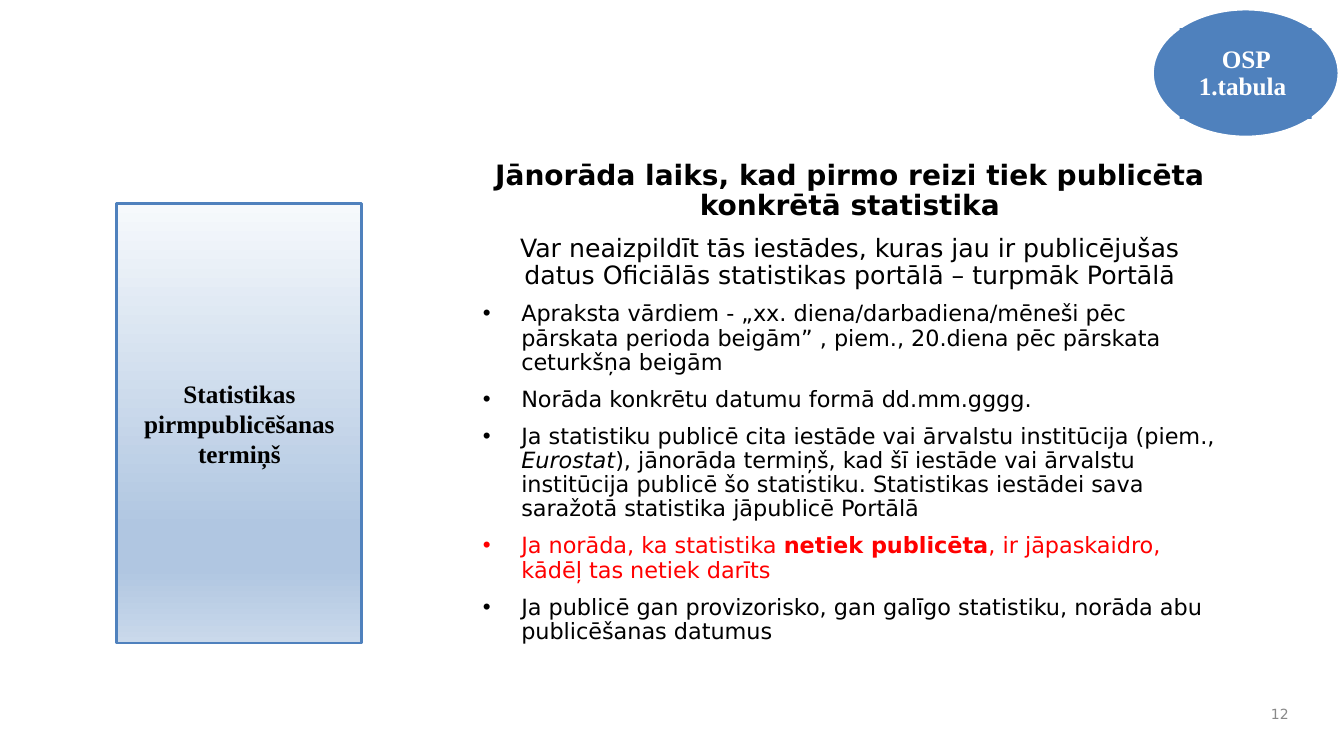
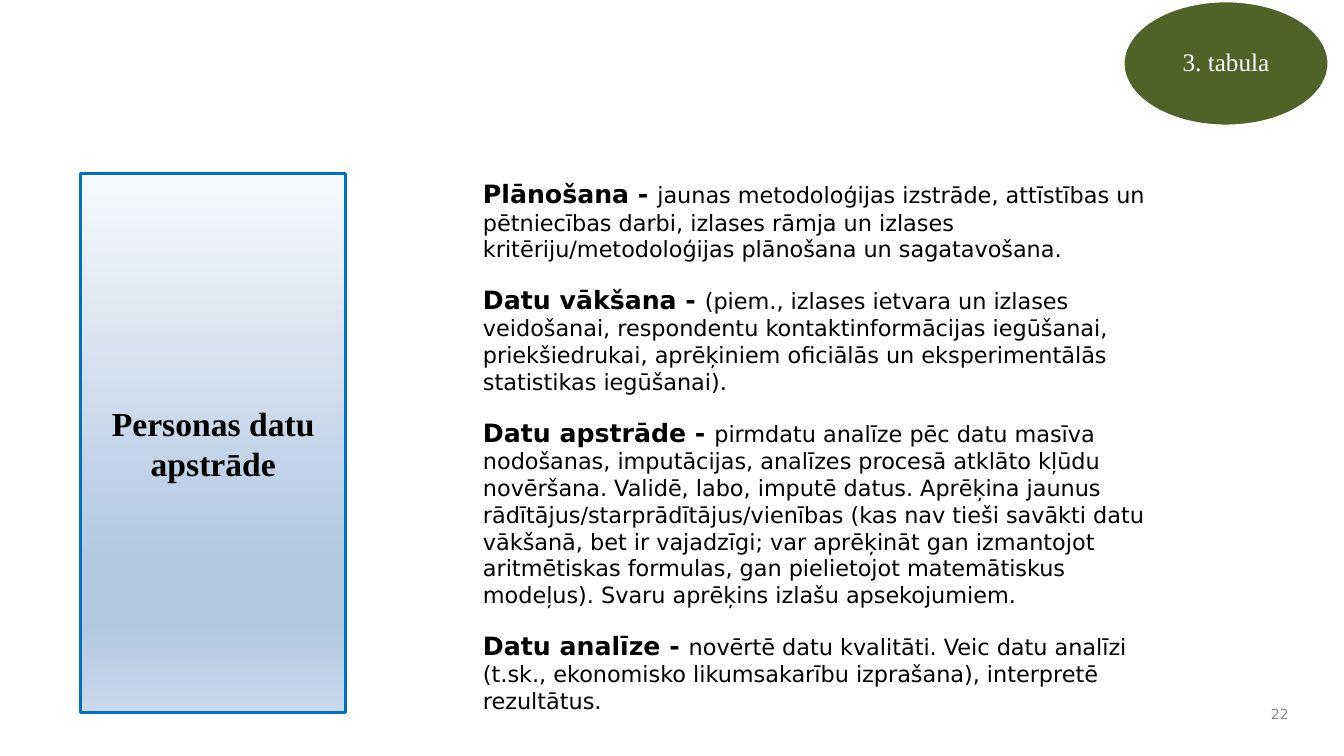
from lxml.etree import SubElement
from pptx import Presentation
from pptx.dml.color import RGBColor
from pptx.enum.shapes import MSO_SHAPE
from pptx.enum.text import MSO_ANCHOR as ANCHOR, MSO_AUTO_SIZE, PP_ALIGN as ALIGN
from pptx.oxml.ns import qn
from pptx.util import Inches, Pt

SANS, SERIF = "DejaVu Sans", "Times New Roman"
BLACK, WHITE, RED, GREY = "000000", "FFFFFF", "FF0000", "898989"
BLUE, BRIGHT_BLUE, GREEN = "4F81BD", "0070C0", "4F6228"
PANEL_STOPS = [(0, "F6F9FC"), (74, "B0C6E1"), (83, "B0C6E1"), (100, "CAD9EB")]
BULLET_INDENT = 0.38


def rgb(value):
    return RGBColor.from_string(value)


def inches(box):
    return [Inches(v) for v in box]


def set_attrs(obj, values):
    for name, value in values.items():
        setattr(obj, name, value)


def set_frame(tf, anchor=ANCHOR.MIDDLE, side=0.1, edge=0.05):
    set_attrs(tf, dict(word_wrap=True, auto_size=MSO_AUTO_SIZE.NONE,
                       vertical_anchor=anchor,
                       margin_left=Inches(side), margin_right=Inches(side),
                       margin_top=Inches(edge), margin_bottom=Inches(edge)))


def add_run(p, text, size, font=SANS, color=BLACK, bold=False, italic=False):
    r = p.add_run()
    r.text = text
    set_attrs(r.font, dict(size=Pt(size), name=font, bold=bold, italic=italic))
    r.font.color.rgb = rgb(color)


def set_bullet(p, bulleted):
    pPr = p._p.get_or_add_pPr()
    indent = Inches(BULLET_INDENT) if bulleted else 0
    pPr.set("marL", str(indent))
    pPr.set("indent", str(-indent))
    if bulleted:
        SubElement(pPr, qn("a:buChar")).set("char", "•")
    else:
        SubElement(pPr, qn("a:buNone"))


def add_body(slide, box, paragraphs, after, spacing=1.0):
    """Fill the body placeholder; a paragraph is (style, list of run formats)."""
    sp = slide.placeholders[1]
    sp.left, sp.top, sp.width, sp.height = inches(box)
    tf = sp.text_frame
    set_frame(tf, ANCHOR.TOP)
    for i, (style, runs) in enumerate(paragraphs):
        p = tf.paragraphs[0] if i == 0 else tf.add_paragraph()
        set_bullet(p, style == "bullet")
        before = 0.2 * runs[0]["size"] if i else 0
        set_attrs(p, dict(alignment=ALIGN.CENTER if style == "center" else ALIGN.LEFT,
                          line_spacing=spacing, space_before=Pt(before),
                          space_after=Pt(after)))
        for run in runs:
            add_run(p, **run)


def add_panel(slide, box, text, size, line_color, line_width):
    sp = slide.shapes.add_shape(MSO_SHAPE.RECTANGLE, *inches(box))
    sp.shadow.inherit = False
    sp.fill.gradient()
    sp.fill.gradient_angle = 270
    stops = sp._element.spPr.find(".//" + qn("a:gsLst"))
    stops.clear()
    for pos, color in PANEL_STOPS:
        gs = SubElement(stops, qn("a:gs"), pos=str(pos * 1000))
        SubElement(gs, qn("a:srgbClr"), val=color)
    sp.line.color.rgb = rgb(line_color)
    sp.line.width = Pt(line_width)
    set_frame(sp.text_frame)
    p = sp.text_frame.paragraphs[0]
    p.alignment = ALIGN.CENTER
    add_run(p, text, size, SERIF, bold=True)


def add_badge(slide, box, label_box, text, color, bold=False, label_fill=None):
    """Group an ellipse with its label, which is offset from the ellipse's corner."""
    left, top = box[:2]
    dx, dy, width, height = label_box
    group = slide.shapes.add_group_shape()
    oval = group.shapes.add_shape(MSO_SHAPE.OVAL, *inches(box))
    oval.shadow.inherit = False
    oval.fill.solid()
    oval.fill.fore_color.rgb = rgb(color)
    oval.line.color.rgb = rgb(WHITE)
    oval.line.width = Pt(2)
    label = group.shapes.add_textbox(*inches((left + dx, top + dy, width, height)))
    if label_fill:
        label.fill.solid()
        label.fill.fore_color.rgb = rgb(label_fill)
    set_frame(label.text_frame, side=0.01, edge=0.01)
    p = label.text_frame.paragraphs[0]
    set_attrs(p, dict(alignment=ALIGN.CENTER, line_spacing=0.9))
    add_run(p, text, 18, SERIF, WHITE, bold)


def add_page_number(slide, number):
    sp = slide.shapes.add_textbox(*inches((12.44, 6.92, 0.44, 0.33)))
    set_frame(sp.text_frame)
    p = sp.text_frame.paragraphs[0]
    p.alignment = ALIGN.RIGHT
    add_run(p, str(number), 10, color=GREY)


def new_slide(prs, number):
    slide = prs.slides.add_slide(prs.slide_layouts[1])
    title = slide.shapes.title._element
    title.getparent().remove(title)
    add_page_number(slide, number)
    return slide


def text_run(text, size=16, **fmt):
    return dict(text=text, size=size, **fmt)


def first_publication_slide(prs):
    slide = new_slide(prs, 12)
    add_body(slide, (4.69, 1.55, 7.48, 5.83), [
        ("center", [text_run("Jānorāda laiks, kad pirmo reizi tiek publicēta konkrētā "
                             "statistika", 20, bold=True)]),
        ("center", [text_run("Var neaizpildīt tās iestādes, kuras jau ir publicējušas datus "
                             "Oficiālās statistikas portālā – turpmāk Portālā", 18)]),
        ("bullet", [text_run("Apraksta vārdiem - „xx. diena/darbadiena/mēneši pēc pārskata "
                             "perioda beigām” , piem., 20.diena pēc pārskata ceturkšņa "
                             "beigām")]),
        ("bullet", [text_run("Norāda konkrētu datumu formā dd.mm.gggg.")]),
        ("bullet", [text_run("Ja statistiku publicē cita iestāde vai ārvalstu institūcija "
                             "(piem., "),
                    text_run("Eurostat", italic=True),
                    text_run("), jānorāda termiņš, kad šī iestāde vai ārvalstu institūcija "
                             "publicē šo statistiku. Statistikas iestādei sava saražotā "
                             "statistika jāpublicē Portālā")]),
        ("bullet", [text_run("Ja norāda, ka statistika ", color=RED),
                    text_run("netiek publicēta", color=RED, bold=True),
                    text_run(", ir jāpaskaidro, kādēļ tas netiek darīts", color=RED)]),
        ("bullet", [text_run("Ja publicē gan provizorisko, gan galīgo statistiku, norāda abu "
                             "publicēšanas datumus")]),
    ], after=6, spacing=0.9)
    add_panel(slide, (1.16, 2.02, 2.43, 4.36), "Statistikas pirmpublicēšanas termiņš",
              18, BLUE, 2)
    add_badge(slide, (11.43, 0.09, 1.85, 1.27), (0.27, 0.19, 1.31, 0.9),
              "OSP 1.tabula ", BLUE, bold=True, label_fill=BLUE)


def personal_data_slide(prs):
    stages = [
        ("Plānošana - ",
         "jaunas metodoloģijas izstrāde, attīstības un pētniecības darbi, izlases rāmja un "
         "izlases kritēriju/metodoloģijas plānošana un sagatavošana."),
        ("Datu vākšana - ",
         "(piem., izlases ietvara un izlases veidošanai, respondentu kontaktinformācijas "
         "iegūšanai, priekšiedrukai, aprēķiniem oficiālās un eksperimentālās statistikas "
         "iegūšanai)."),
        ("Datu apstrāde - ",
         "pirmdatu analīze pēc datu masīva nodošanas, imputācijas, analīzes procesā atklāto "
         "kļūdu novēršana. Validē, labo, imputē datus. Aprēķina jaunus "
         "rādītājus/starprādītājus/vienības (kas nav tieši savākti datu vākšanā, bet ir "
         "vajadzīgi; var aprēķināt gan izmantojot aritmētiskas formulas, gan pielietojot "
         "matemātiskus modeļus). Svaru aprēķins izlašu apsekojumiem."),
        ("Datu analīze - ",
         "novērtē datu kvalitāti. Veic datu analīzi (t.sk., ekonomisko likumsakarību "
         "izprašana), interpretē rezultātus."),
    ]
    slide = new_slide(prs, 22)
    add_body(slide, (4.69, 1.72, 7.09, 4.91),
             [("left", [text_run(name, 18, bold=True), text_run(description)])
              for name, description in stages], after=12)
    add_panel(slide, (0.8, 1.72, 2.63, 5.35), "Personas datu apstrāde",
              24, BRIGHT_BLUE, 2.25)
    add_badge(slide, (11.14, 0.01, 2.04, 1.24), (0.3, 0.18, 1.44, 0.87),
              "3. tabula", GREEN)


def main():
    prs = Presentation()
    prs.slide_width, prs.slide_height = Inches(13.33), Inches(7.5)
    first_publication_slide(prs)
    personal_data_slide(prs)
    prs.save("out.pptx")


if __name__ == "__main__":
    main()
